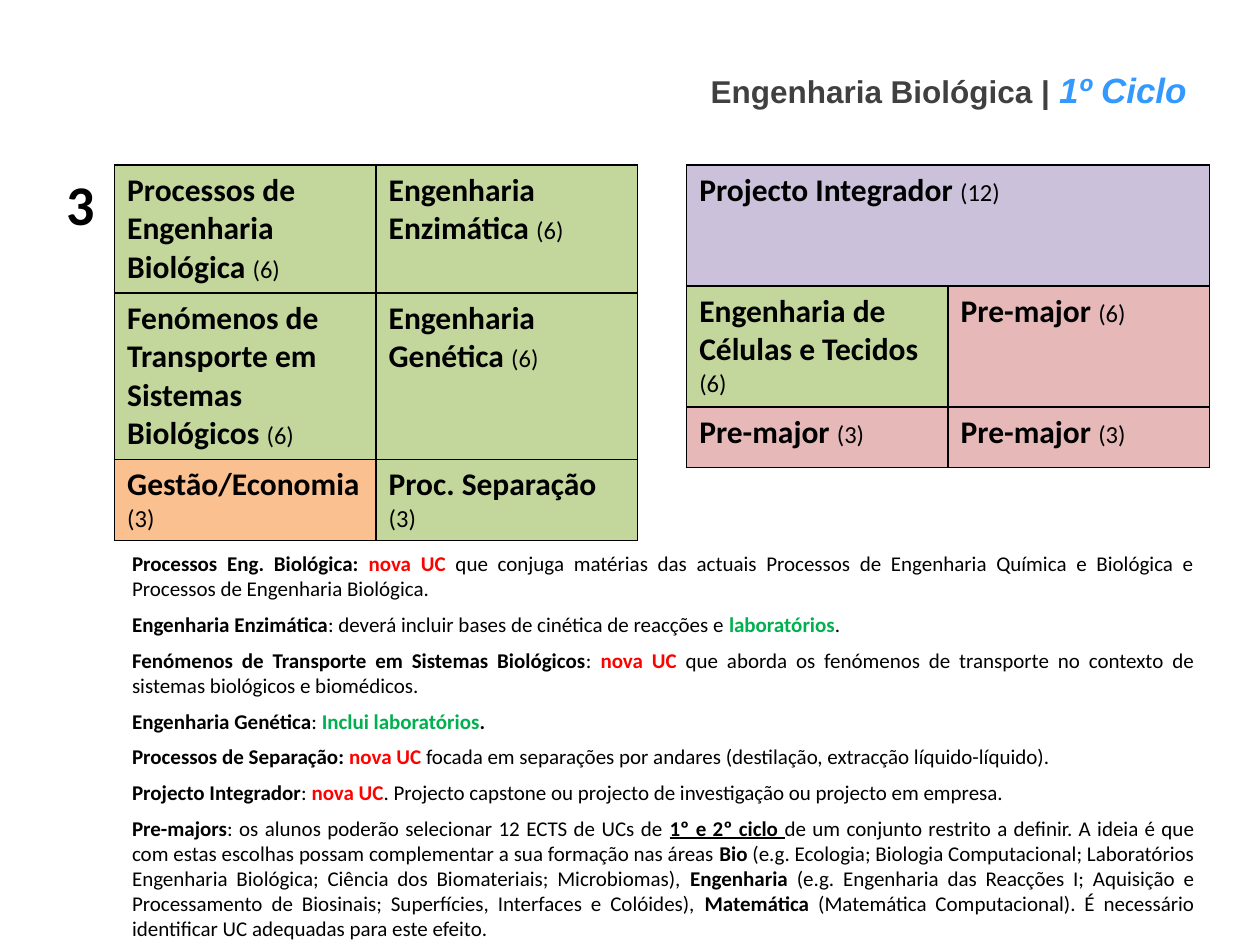
from lxml import etree
from pptx import Presentation
from pptx.dml.color import RGBColor
from pptx.enum import text as t
from pptx.oxml import ns
from pptx.util import Inches, Pt

GREEN, ORANGE, LILAC, PINK = "C3D69B", "FAC090", "CCC1DA", "E6B9B8"
BLACK = "000000"

# Content: each cell is (course, credits, fill); None joins the cell to its left
YEAR = "3"
TITLE = [("Engenharia Biológica | ", 18, "404040", False),
         ("1º Ciclo", 20, "3399FF", True)]
TERMS = [
    (0.91, [
        [("Processos de Engenharia Biológica", 6, GREEN),
         ("Engenharia Enzimática", 6, GREEN)],
        [("Fenómenos de Transporte em Sistemas Biológicos", 6, GREEN),
         ("Engenharia Genética", 6, GREEN)],
        [("Gestão/Economia", 3, ORANGE), ("Proc. Separação", 3, GREEN)],
    ]),
    (5.45, [
        [("Projecto Integrador", 12, LILAC), None],
        [("Engenharia de Células e Tecidos", 6, GREEN), ("Pre-major", 6, PINK)],
        [("Pre-major", 3, PINK), ("Pre-major", 3, PINK)],
    ]),
]
ROWS = [0.96, 0.96, 0.48]
COL = 2.075

# Note styles: (bold, underline, colour)
STYLES = {"": (False, False, BLACK), "b": (True, False, BLACK),
          "u": (True, True, BLACK), "new": (True, False, "FF0000"),
          "lab": (True, False, "00B050")}
NOTES = [
    [("Processos Eng. Biológica: ", "b"), ("nova UC", "new"),
     (" que conjuga matérias das actuais Processos de Engenharia Química e "
      "Biológica e Processos de Engenharia Biológica. ", "")],
    [("Engenharia Enzimática", "b"),
     (": deverá incluir bases de cinética de reacções e ", ""),
     ("laboratórios", "lab"), (". ", "")],
    [("Fenómenos de Transporte em Sistemas Biológicos", "b"), (": ", ""),
     ("nova UC", "new"),
     (" que aborda os fenómenos de transporte no contexto de sistemas "
      "biológicos e biomédicos.", "")],
    [("Engenharia Genética", "b"), (": ", ""),
     ("Inclui laboratórios", "lab"), (".", "b")],
    [("Processos de Separação: ", "b"), ("nova UC ", "new"),
     ("focada em separações por andares (destilação, extracção "
      "líquido-líquido).", "")],
    [("Projecto Integrador", "b"), (": ", ""), ("nova UC", "new"),
     (". Projecto capstone ou projecto de investigação ou projecto em "
      "empresa.", "")],
    [("Pre-majors", "b"),
     (": os alunos poderão selecionar 12 ECTS de UCs de ", ""),
     ("1º e 2º ciclo ", "u"),
     ("de um conjunto restrito a definir. A ideia é que com estas escolhas "
      "possam complementar a sua formação nas áreas ", ""),
     ("Bio", "b"),
     (" (e.g. Ecologia; Biologia Computacional; Laboratórios Engenharia "
      "Biológica; Ciência dos Biomateriais; Microbiomas), ", ""),
     ("Engenharia ", "b"),
     ("(e.g. Engenharia das Reacções I; Aquisição e Processamento de "
      "Biosinais; Superfícies, Interfaces e Colóides), ", ""),
     ("Matemática ", "b"),
     ("(Matemática Computacional). É necessário identificar UC adequadas "
      "para este efeito.", "")],
]


def rgb(code):
    return RGBColor.from_string(code)


def add_run(para, words, size, bold=True, color=BLACK, face="Calibri"):
    run = para.add_run()
    run.text = words
    font = run.font
    font.name, font.size, font.bold = face, Pt(size), bold
    font.color.rgb = rgb(color)
    return font


def add_box(slide, *place):
    frame = slide.shapes.add_textbox(*map(Inches, place)).text_frame
    frame.word_wrap = True
    return frame


def set_edges(cell):
    props = cell._tc.get_or_add_tcPr()
    for spot, side in enumerate(("lnL", "lnR", "lnT", "lnB")):
        line = etree.Element(ns.qn("a:" + side), w=str(Pt(1)))
        fill = etree.SubElement(line, ns.qn("a:solidFill"))
        etree.SubElement(fill, ns.qn("a:srgbClr"), val=BLACK)
        props.insert(spot, line)


def add_term(slide, left, rows):
    place = map(Inches, (left, 1.31, 2 * COL, sum(ROWS)))
    table = slide.shapes.add_table(len(rows), 2, *place).table
    for col in table.columns:
        col.width = Inches(COL)
    for r, row in enumerate(rows):
        table.rows[r].height = Inches(ROWS[r])
        for c, item in enumerate(row):
            cell = table.cell(r, c)
            set_edges(cell)
            if item is None:
                table.cell(r, c - 1).merge(cell)
                continue
            name, credits, color = item
            cell.fill.solid()
            cell.fill.fore_color.rgb = rgb(color)
            para = cell.text_frame.paragraphs[0]
            add_run(para, name + " ", 18)
            add_run(para, f"({credits})", 14, bold=False)


def main():
    deck = Presentation()
    deck.slide_width, deck.slide_height = Inches(10), Inches(7.5)
    slide = deck.slides.add_slide(deck.slide_layouts[5])

    # Title
    head = slide.shapes.title
    head.left, head.top, head.width, head.height = map(
        Inches, (5.06, 0.29, 4.94, 0.68))
    frame = head.text_frame
    frame.auto_size = t.MSO_AUTO_SIZE.NONE
    frame.vertical_anchor = t.MSO_ANCHOR.MIDDLE
    para = frame.paragraphs[0]
    para.alignment, para.line_spacing = t.PP_ALIGN.CENTER, 1.5
    for words, size, color, slant in TITLE:
        add_run(para, words, size, color=color, face="Arial").italic = slant

    # Course tables
    for left, rows in TERMS:
        add_term(slide, left, rows)

    # Year number
    add_run(add_box(slide, 0.43, 1.3, 0.31, 0.64).paragraphs[0], YEAR, 32)

    # Notes
    frame = add_box(slide, 0.95, 4.32, 8.63, 3.23)
    for i, note in enumerate(NOTES):
        para = frame.add_paragraph() if i else frame.paragraphs[0]
        para.alignment, para.space_after = t.PP_ALIGN.JUSTIFY, Pt(6)
        for words, style in note:
            bold, under, color = STYLES[style]
            add_run(para, words, 12, bold, color).underline = under

    deck.save("out.pptx")


if __name__ == "__main__":
    main()
